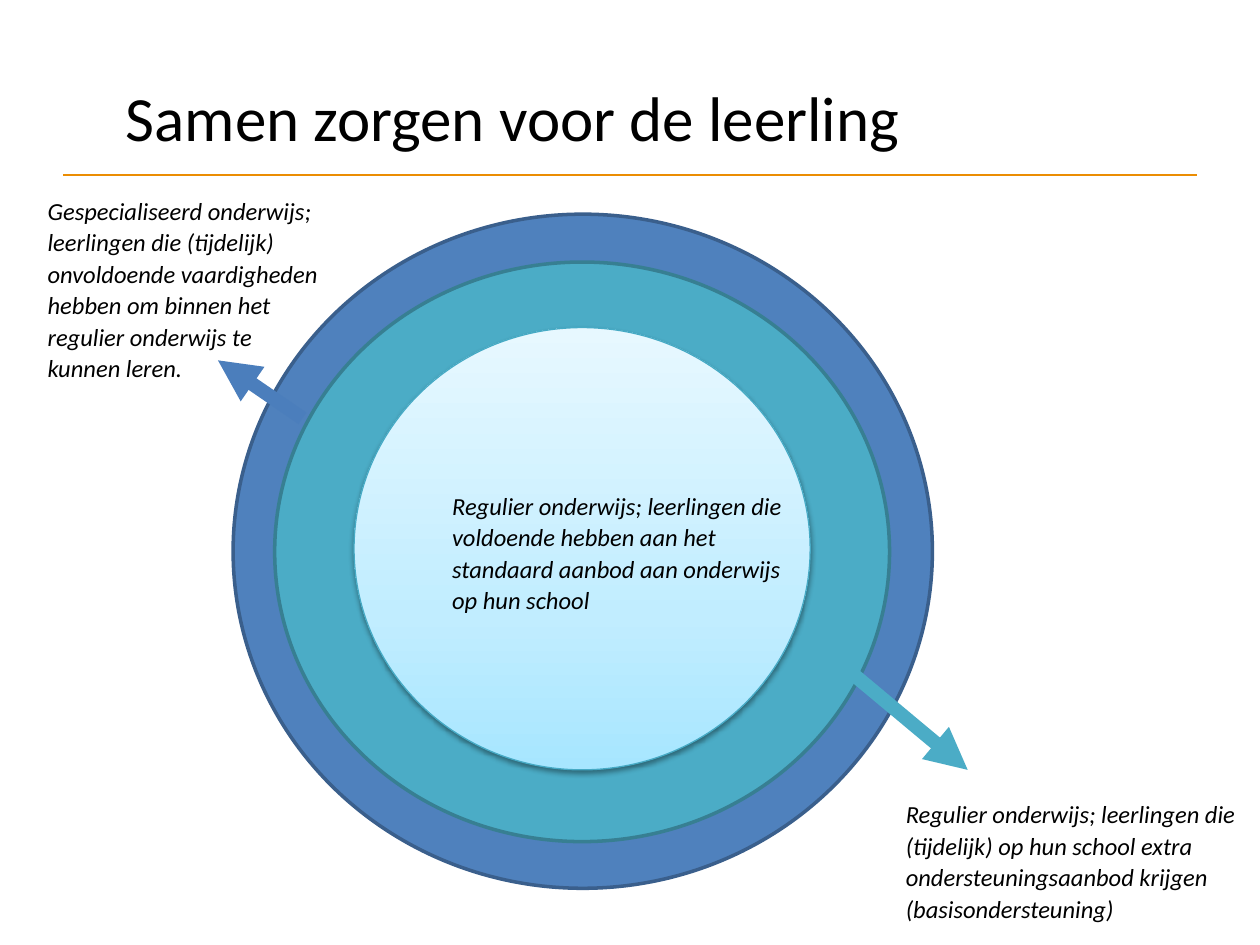
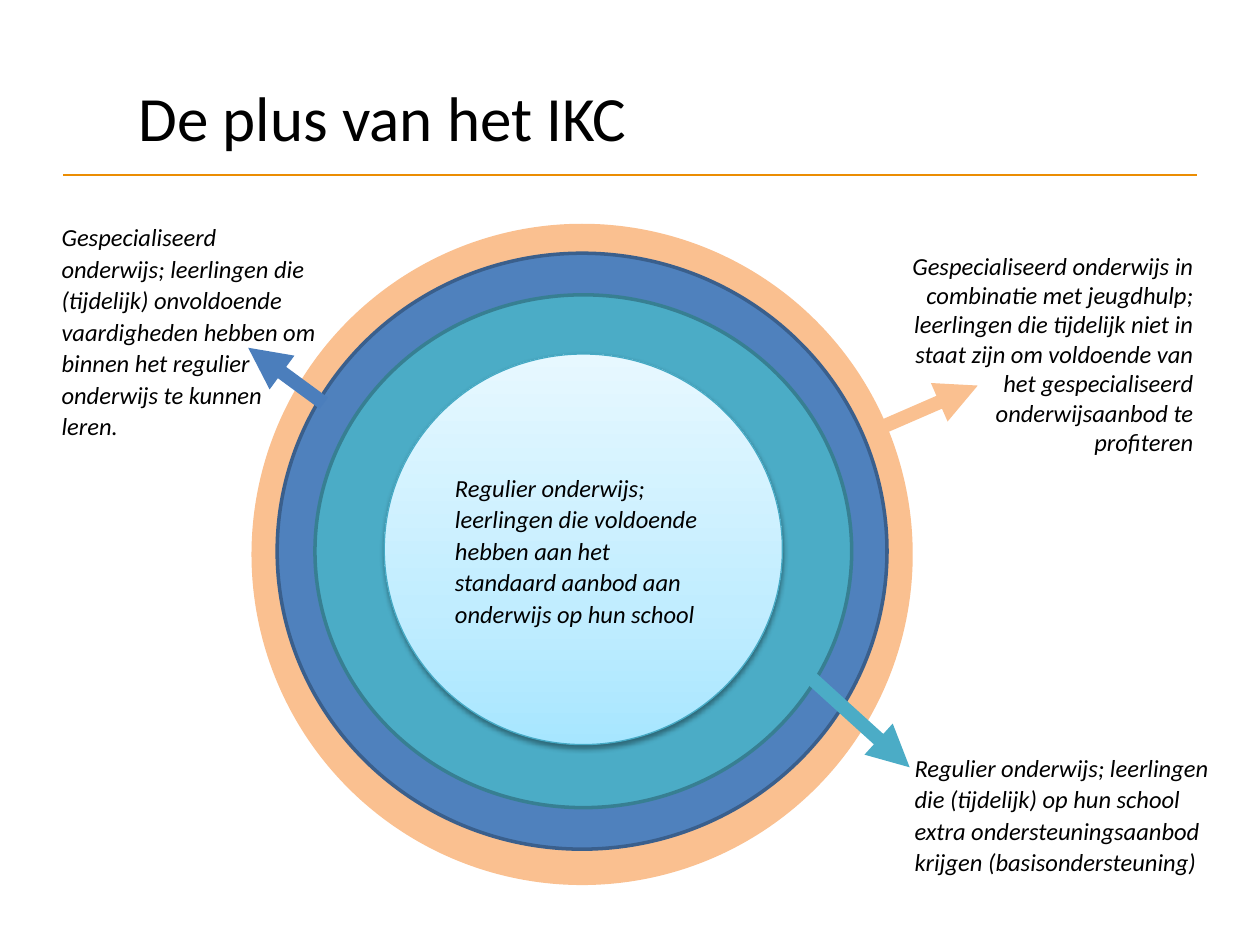
import copy

import pptx
import pptx.dml.color
import pptx.enum.shapes
import pptx.enum.text
import pptx.oxml
import pptx.oxml.ns
import pptx.util

PX = 9144  # EMU per px, 100 px to the inch
ALIGN = pptx.enum.text.PP_ALIGN
ANCHOR = pptx.enum.text.MSO_ANCHOR

# Colours
BLACK, ORANGE = "000000", "EB8D03"
PEACH, BLUE, TEAL = "FAC090", "4F81BD", "4BACC6"
BLUE_EDGE, TEAL_EDGE, CORE_EDGE = "3A5F8C", "377F92", "46AAC5"
BLUE_ARROW = "4B7EBC"
CORE_STOPS = [(0, "A7E6FF"), (0.35, "C1EDFF"), (1, "E7F8FF")]

# Text formats
TITLE_FONT = {"name": "Calibri", "size": pptx.util.Pt(36), "italic": False}
NOTE_FONT = {"name": "Calibri", "size": pptx.util.Pt(14), "italic": True}
SPACED = {"alignment": ALIGN.LEFT, "line_spacing": 1.07,
          "space_after": pptx.util.Pt(8)}
RIGHT = {"alignment": ALIGN.RIGHT}

# Wording of the care levels
REGULAR = ("Regulier onderwijs; leerlingen die voldoende hebben aan het "
           "standaard aanbod aan onderwijs op hun school")
SUPPORT = ("Regulier onderwijs; leerlingen die (tijdelijk) op hun school extra "
           "ondersteuningsaanbod krijgen (basisondersteuning)")
SPECIAL = ("Gespecialiseerd onderwijs; leerlingen die (tijdelijk) onvoldoende "
           "vaardigheden hebben om binnen het regulier onderwijs te kunnen leren.")
YOUTH_CARE = ("Gespecialiseerd onderwijs in combinatie met jeugdhulp; leerlingen "
              "die tijdelijk niet in staat zijn om voldoende van het "
              "gespecialiseerd onderwijsaanbod te profiteren")


def rgb(hex_code):
    return pptx.dml.color.RGBColor.from_string(hex_code)


def emu(lengths):
    return [length * PX for length in lengths]


def apply(target, values):
    for name, value in values.items():
        setattr(target, name, value)


def add_xml(parent, body):
    """Append one DrawingML element to parent."""
    tag, rest = body.split(" ", 1)
    parent.append(pptx.oxml.parse_xml(
        f"<a:{tag} {pptx.oxml.ns.nsdecls('a')} {rest}"))


class CarePage:
    """Holds the deck and the current page, and draws on it."""

    def __init__(self):
        self.deck = pptx.Presentation()
        self.deck.slide_width, self.deck.slide_height = emu((1000, 750))

    def start(self, title, indent):
        """New page with its title and the orange rule."""
        self.page = self.deck.slides.add_slide(self.deck.slide_layouts[6])
        self.line((50, 139), (950, 139), ORANGE, 1)
        self.text((50 + indent, 30, 900 - indent, 125), title, TITLE_FONT, {},
                  ANCHOR.MIDDLE)

    def put_words(self, shape, words, font, layout, anchor):
        frame = shape.text_frame
        apply(frame, {"word_wrap": True, "vertical_anchor": anchor})
        para = frame.paragraphs[0]
        apply(para, layout)
        span = para.add_run()
        span.text = words
        apply(span.font, font)
        span.font.color.rgb = rgb(BLACK)

    def text(self, place, words, font=NOTE_FONT, layout=SPACED, anchor=ANCHOR.TOP):
        box = self.page.shapes.add_textbox(*emu(place))
        self.put_words(box, words, font, layout, anchor)

    def ring(self, place, fill, edge, weight=2):
        oval = self.page.shapes.add_shape(
            pptx.enum.shapes.MSO_SHAPE.OVAL, *emu(place))
        oval.shadow.inherit = False
        oval.fill.solid()
        oval.fill.fore_color.rgb = rgb(fill)
        oval.line.color.rgb = rgb(edge)
        oval.line.width = pptx.util.Pt(weight)
        return oval

    def core(self, place, words=None):
        """Inner circle: gradient, soft shadow, optional text."""
        oval = self.ring(place, CORE_STOPS[0][1], CORE_EDGE, 0.75)
        oval.fill.gradient()
        oval.fill.gradient_angle = 90
        properties = oval.element.spPr
        stop_list = next(properties.iter(pptx.oxml.ns.qn("a:gsLst")))
        stop_list.append(copy.deepcopy(stop_list[0]))
        for stop, (position, colour) in zip(oval.fill.gradient_stops, CORE_STOPS):
            stop.position = position
            stop.color.rgb = rgb(colour)
        add_xml(properties.find(pptx.oxml.ns.qn("a:effectLst")),
                'outerShdw blurRad="39370" dist="20320" dir="5400000" '
                'rotWithShape="0"><a:srgbClr val="000000">'
                '<a:alpha val="38000"/></a:srgbClr></a:outerShdw>')
        if words:
            self.put_words(oval, words, NOTE_FONT, SPACED, ANCHOR.MIDDLE)

    def line(self, start, end, colour, weight, arrow=False):
        connector = self.page.shapes.add_connector(
            pptx.enum.shapes.MSO_CONNECTOR.STRAIGHT, *emu(start + end))
        connector.line.color.rgb = rgb(colour)
        connector.line.width = pptx.util.Pt(weight)
        properties = connector.element.spPr
        if arrow:
            add_xml(properties.find(pptx.oxml.ns.qn("a:ln")),
                    'tailEnd type="triangle"/>')
        add_xml(properties, "effectLst />")

    def arrow(self, start, end, colour):
        self.line(start, end, colour, 8, arrow=True)


def main():
    care = CarePage()

    # Three levels of education
    care.start("Samen zorgen voor de leerling", 40)
    care.ring((185, 170, 555, 535), BLUE, BLUE_EDGE)
    care.ring((218, 208, 488, 460), TEAL, TEAL_EDGE)
    care.core((281, 260, 362, 351))
    care.text((349, 383, 289, 126), REGULAR)
    care.text((28, 149, 236, 161), SPECIAL)
    care.text((709, 628, 291, 84), SUPPORT)
    care.arrow((240, 332), (173, 286), BLUE_ARROW)
    care.arrow((665, 525), (768, 611), TEAL)

    # The same levels with youth care around them
    care.start("De plus van het IKC", 50)
    care.ring((201, 179, 522, 522), PEACH, PEACH)
    care.ring((220, 201, 484, 473), BLUE, BLUE_EDGE)
    care.ring((250, 234, 426, 407), TEAL, TEAL_EDGE)
    care.core((305, 281, 316, 310), REGULAR)
    care.text((39, 170, 225, 185), SPECIAL)
    care.text((716, 591, 272, 110), SUPPORT)
    care.text((705, 194, 252, 175), YOUTH_CARE, layout=RIGHT)
    care.arrow((257, 320), (197, 276), BLUE_ARROW)
    care.arrow((636, 531), (722, 609), TEAL)
    care.arrow((700, 339), (776, 306), PEACH)

    care.deck.save("out.pptx")


if __name__ == "__main__":
    main()
